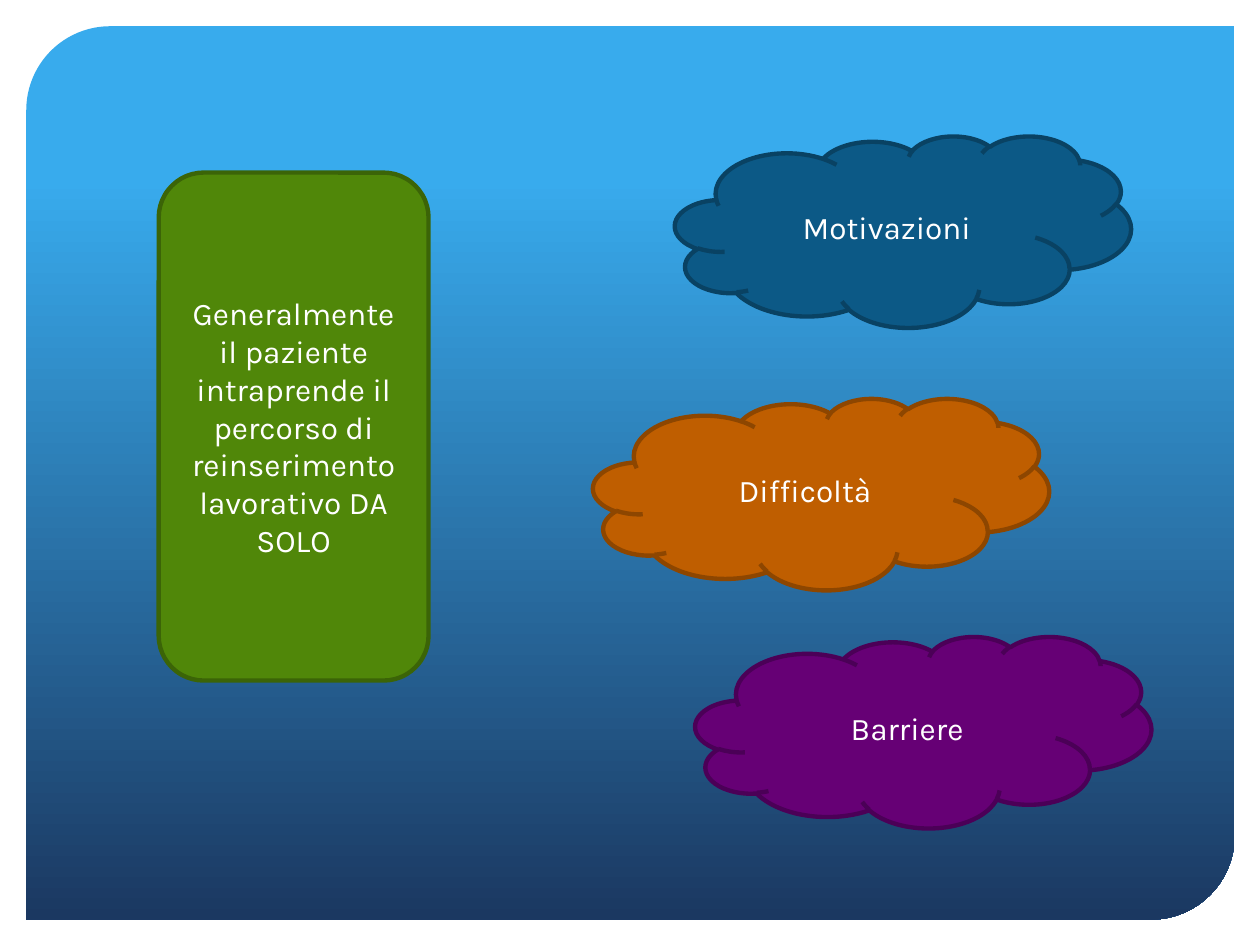
from pptx import Presentation
from pptx.dml.color import RGBColor
from pptx.enum.shapes import MSO_SHAPE
from pptx.enum.text import MSO_ANCHOR, PP_ALIGN
from pptx.util import Cm, Pt

WHITE = RGBColor(0xFF, 0xFF, 0xFF)
SKY = RGBColor(0x38, 0xAB, 0xED)
NAVY = RGBColor(0x1B, 0x38, 0x61)
GREEN = RGBColor(0x50, 0x87, 0x09)
MOSS = RGBColor(0x3B, 0x64, 0x07)
BLUE = RGBColor(0x0C, 0x59, 0x86)
INK = RGBColor(0x09, 0x42, 0x63)
ORANGE = RGBColor(0xBF, 0x5E, 0x00)
BROWN = RGBColor(0x8D, 0x46, 0x00)
PURPLE = RGBColor(0x66, 0x00, 0x75)
PLUM = RGBColor(0x4B, 0x00, 0x57)


class Deck:
    font = "Karla"
    size = Pt(18)
    edge = Pt(2.5)

    def __init__(self, slide):
        self.slide = slide

    def shape(self, kind, left, top, width, height):
        shape = self.slide.shapes.add_shape(
            kind, Cm(left), Cm(top), Cm(width), Cm(height))
        shape.shadow.inherit = False
        return shape

    def panel(self, left, top, width, height):
        panel = self.shape(MSO_SHAPE.ROUND_2_DIAG_RECTANGLE,
                           left, top, width, height)
        panel.adjustments[0] = 0.094
        panel.line.fill.background()
        panel.fill.gradient()
        panel.fill.gradient_angle = 270
        stops = zip(panel.fill.gradient_stops, (0.17, 1), (SKY, NAVY))
        for stop, place, color in stops:
            stop.position = place
            stop.color.rgb = color

    def label(self, kind, text, left, top, width, height, fill, line):
        shape = self.shape(kind, left, top, width, height)
        shape.fill.solid()
        shape.fill.fore_color.rgb = fill
        shape.line.color.rgb = line
        shape.line.width = self.edge
        frame = shape.text_frame
        frame.text = text
        frame.word_wrap = True
        frame.vertical_anchor = MSO_ANCHOR.MIDDLE
        para = frame.paragraphs[0]
        para.alignment = PP_ALIGN.CENTER
        font = para.runs[0].font
        font.name = self.font
        font.size = self.size
        font.color.rgb = WHITE


def main():
    prs = Presentation()
    prs.slide_width, prs.slide_height = Cm(25.4), Cm(19.05)
    deck = Deck(prs.slides.add_slide(prs.slide_layouts[6]))

    # Backdrop
    deck.panel(0.53, 0.53, 24.36, 18.01)

    # Patient's path
    deck.label(MSO_SHAPE.ROUNDED_RECTANGLE,
               "Generalmente il paziente intraprende il percorso di "
               "reinserimento lavorativo DA SOLO",
               3.2, 3.48, 5.44, 10.24, GREEN, MOSS)

    # Factors met on the way
    clouds = [
        ("Motivazioni", 13.61, 2.74, BLUE, INK),
        ("Difficoltà", 11.96, 8.03, ORANGE, BROWN),
        ("Barriere", 14.02, 12.83, PURPLE, PLUM),
    ]
    for text, left, top, fill, line in clouds:
        deck.label(MSO_SHAPE.CLOUD, text, left, top, 9.19, 3.86, fill, line)

    prs.save("out.pptx")


if __name__ == "__main__":
    main()
